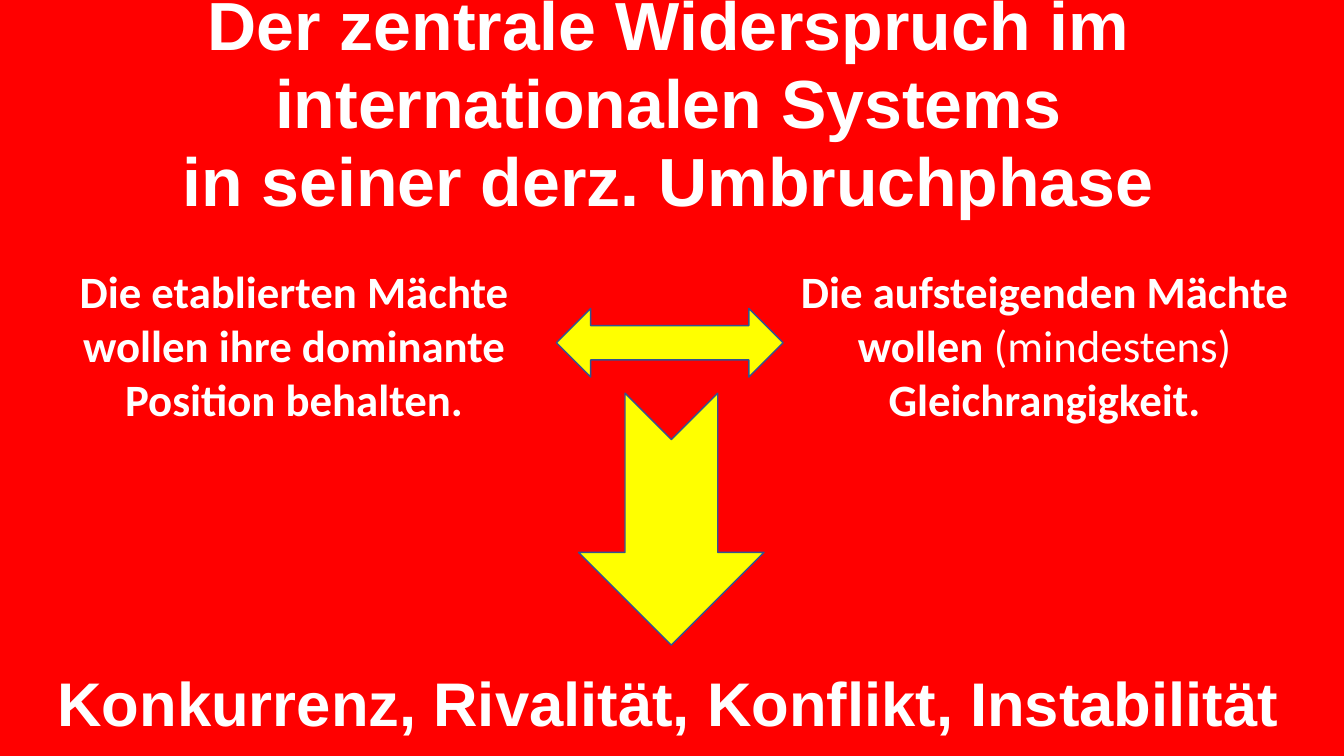
from dataclasses import dataclass

from pptx import Presentation
from pptx import util as u
from pptx.dml.color import RGBColor
from pptx.enum import shapes, text


@dataclass(frozen=True)
class Theme:
    back: str = "FF0000"
    ink: str = "FFFFFF"
    arrow: str = "FFFF00"
    edge: str = "325491"
    head: str = "Arial"
    body: str = "Calibri"
    title: float = 48.6
    claim: float = 32
    result: float = 44


class Page:
    """Holds the theme and the current slide."""

    def __init__(self, deck, theme):
        self.theme = theme
        self.slide = deck.slides.add_slide(deck.slide_layouts[5])
        self.paint(self.slide.background.fill, theme.back)

    def paint(self, fill, color):
        fill.solid()
        fill.fore_color.rgb = RGBColor.from_string(color)

    def style(self, run, face, size, bold=True):
        run.font.name = face
        run.font.size = u.Pt(size)
        run.font.bold = bold
        run.font.color.rgb = RGBColor.from_string(self.theme.ink)

    def title(self, lines, box, shift):
        """Fill the title; the last line starts further left by shift."""
        shape = self.slide.shapes.title
        shape.left, shape.top, shape.width, shape.height = map(u.Pt, box)
        frame = shape.text_frame
        frame.text = "\n".join(lines)
        frame.word_wrap = True
        frame.auto_size = text.MSO_AUTO_SIZE.NONE
        frame.vertical_anchor = text.MSO_ANCHOR.MIDDLE
        for para in frame.paragraphs:
            para.alignment = text.PP_ALIGN.CENTER
            para.line_spacing = 0.95
            para.space_before = u.Pt(0)
            self.style(para.runs[0], self.theme.head, self.theme.title)
        props = frame.paragraphs[-1]._p.get_or_add_pPr()
        props.set("marL", "0")
        props.set("indent", str(-u.Pt(shift)))

    def label(self, parts, box, face, size):
        """Add a centred text whose parts are bold and plain by turns."""
        frame = self.slide.shapes.add_textbox(*map(u.Pt, box)).text_frame
        frame.word_wrap = True
        frame.auto_size = text.MSO_AUTO_SIZE.SHAPE_TO_FIT_TEXT
        para = frame.paragraphs[0]
        para.alignment = text.PP_ALIGN.CENTER
        for i, part in enumerate(parts):
            run = para.add_run()
            run.text = part
            self.style(run, face, size, bold=i % 2 == 0)

    def arrow(self, kind, box, turn=0):
        shape = self.slide.shapes.add_shape(kind, *map(u.Pt, box))
        shape.rotation = turn
        shape.shadow.inherit = False
        self.paint(shape.fill, self.theme.arrow)
        self.paint(shape.line.fill, self.theme.edge)
        shape.line.width = u.Pt(1)


def main():
    deck = Presentation()
    deck.slide_width, deck.slide_height = u.Pt(960), u.Pt(540)
    theme = Theme()
    page = Page(deck, theme)
    kinds = shapes.MSO_SHAPE

    page.title(
        ["Der zentrale Widerspruch im internationalen Systems",
         "in seiner derz. Umbruchphase"],
        (0, 23, 954.7, 104.4), shift=40.5)
    claims = [
        (["Die etablierten Mächte wollen ihre dominante Position behalten."],
         48.2, 324),
        (["Die aufsteigenden Mächte wollen ", "(mindestens) ",
          "Gleichrangigkeit."], 559.4, 373.7),
    ]
    for parts, left, width in claims:
        page.label(parts, (left, 185, width, 123.8), theme.body, theme.claim)
    page.arrow(kinds.NOTCHED_RIGHT_ARROW, (389.5, 304.6, 180, 132.5), turn=90)
    page.label(["Konkurrenz, Rivalität, Konflikt, Instabilität"],
               (27.4, 471.6, 900.7, 60.5), theme.head, theme.result)
    page.arrow(kinds.LEFT_RIGHT_ARROW, (397.4, 220.3, 162, 49))
    deck.save("out.pptx")


if __name__ == "__main__":
    main()
